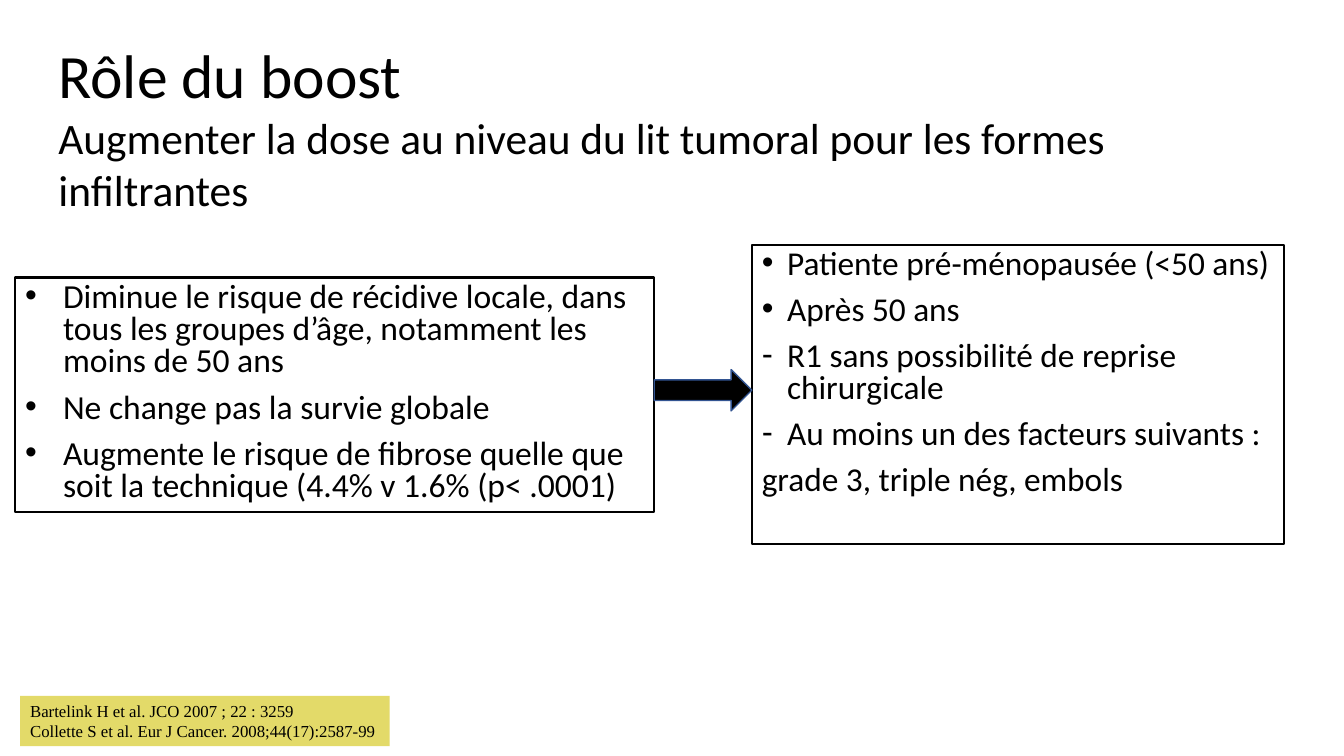
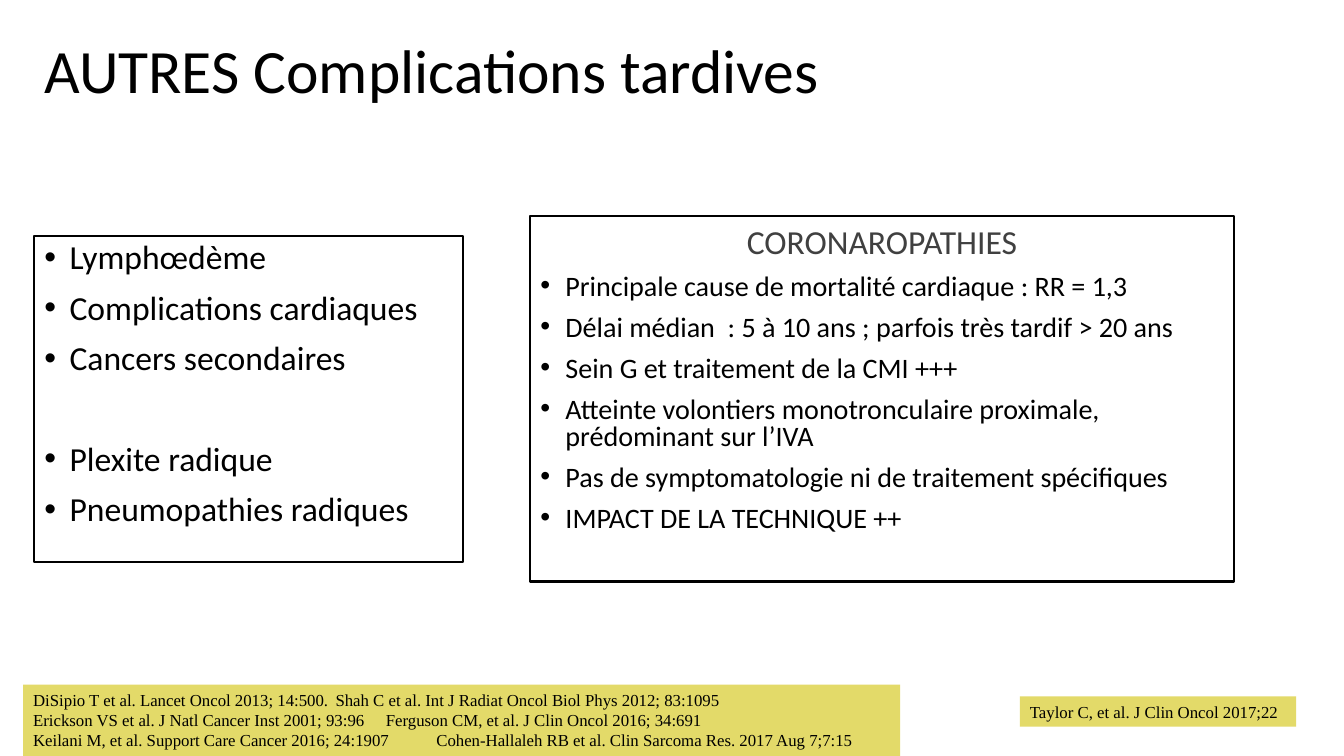
from pptx import Presentation
from pptx.dml.color import RGBColor
from pptx.enum.shapes import MSO_SHAPE
from pptx.enum.text import MSO_ANCHOR, MSO_AUTO_SIZE, PP_ALIGN
from pptx.oxml.ns import qn
from pptx.util import Pt
from lxml.etree import SubElement

BLACK = RGBColor(0x00, 0x00, 0x00)
GREY = RGBColor(0x40, 0x40, 0x40)
BLUE = RGBColor(0x32, 0x54, 0x91)
YELLOW = RGBColor(0xE3, 0xDA, 0x69)

# Text styles: a line may override any value.
BASE = dict(font="Calibri", size=24, color=BLACK, align=PP_ALIGN.LEFT,
            spacing=1, before=0, bullet=None, indent=0, tab=None)
TITLE = dict(BASE, size=44)
LIST = dict(BASE, spacing=0.8, before=10, bullet="•", indent=18)
CITE = dict(BASE, font="Times New Roman", size=12, tab=294)

# Boxes are (left, top, width, height) in points.
SLIDES = [
    dict(
        title=dict(
            box=(34.5, 23, 900, 138), anchor=MSO_ANCHOR.TOP, style=TITLE,
            lines=["Rôle du boost",
                   ("Augmenter la dose au niveau du lit tumoral pour les formes "
                    "infiltrantes", dict(size=31))]),
        lists=[
            dict(box=(10.8, 198.2, 456.5, 167.8), style=dict(LIST, indent=27),
                 lines=["Diminue le risque de récidive locale, dans tous les groupes "
                        "d’âge, notamment les moins de 50 ans",
                        "Ne change pas la survie globale",
                        "Augmente le risque de fibrose quelle que soit la technique "
                        "(4.4% v 1.6% (p< .0001)"]),
            dict(box=(537, 175, 380, 213.8), style=dict(LIST, size=23.8),
                 lines=["Patiente pré-ménopausée (<50 ans)",
                        "Après 50 ans",
                        ("R1 sans possibilité de reprise chirurgicale", dict(bullet="-")),
                        ("Au moins un des facteurs suivants :", dict(bullet="-")),
                        ("grade 3, triple nég, embols", dict(bullet=None, indent=0))]),
        ],
        arrow=(264, 29.5),
        cites=[
            dict(box=(14.4, 497, 264, 36),
                 lines=["Bartelink H et al. JCO 2007 ; 22 : 3259",
                        "Collette S et al. Eur J Cancer. 2008;44(17):2587-99"]),
        ],
    ),
    dict(
        title=dict(
            box=(24.5, 24.5, 611, 56), anchor=MSO_ANCHOR.MIDDLE,
            style=dict(TITLE, spacing=0.9),
            lines=["AUTRES Complications tardives"]),
        lists=[
            dict(box=(24.5, 168.5, 306, 233), style=dict(LIST, spacing=0.9),
                 lines=["Lymphœdème",
                        "Complications cardiaques",
                        "Cancers secondaires",
                        ("Plexite radique", dict(before=46)),
                        "Pneumopathies radiques"]),
            dict(box=(378.7, 154, 502.6, 261.4), style=dict(LIST, size=20.1),
                 lines=[("CORONAROPATHIES",
                         dict(size=24, color=GREY, align=PP_ALIGN.CENTER,
                              spacing=1, bullet=None, indent=0)),
                        "Principale cause de mortalité cardiaque : RR = 1,3",
                        "Délai médian  : 5 à 10 ans ; parfois très tardif > 20 ans",
                        "Sein G et traitement de la CMI +++",
                        "Atteinte volontiers monotronculaire proximale, prédominant "
                        "sur l’IVA",
                        "Pas de symptomatologie ni de traitement spécifiques",
                        "IMPACT DE LA TECHNIQUE ++"]),
        ],
        cites=[
            dict(box=(728.6, 497.5, 197.3, 21.6),
                 lines=["Taylor C, et al. J Clin Oncol 2017;22"]),
            dict(box=(16.6, 489, 626.4, 51),
                 lines=["DiSipio T et al. Lancet Oncol 2013; 14:500.\t"
                        "Shah C et al. Int J Radiat Oncol Biol Phys 2012; 83:1095",
                        "Erickson VS et al. J Natl Cancer Inst 2001; 93:96\t"
                        "Ferguson CM, et al. J Clin Oncol 2016; 34:691",
                        "Keilani M, et al. Support Care Cancer 2016; 24:1907\t"
                        "Cohen-Hallaleh RB et al. Clin Sarcoma Res. 2017 Aug 7;7:15"]),
        ],
    ),
]


def place(shape, box):
    for name, value in zip(("left", "top", "width", "height"), box):
        setattr(shape, name, Pt(value))


def mark(para, style):
    """Set the bullet, hanging indent and tab stop of a paragraph."""
    props = para._p.get_or_add_pPr()
    props.set("marL", str(Pt(style["indent"])))
    props.set("indent", str(-Pt(style["indent"])))
    if style["bullet"]:
        SubElement(props, qn("a:buChar"), char=style["bullet"])
    else:
        SubElement(props, qn("a:buNone"))
    if style["tab"]:
        tabs = SubElement(props, qn("a:tabLst"))
        SubElement(tabs, qn("a:tab"), pos=str(Pt(style["tab"])), algn="l")


def write(shape, lines, base, anchor=MSO_ANCHOR.TOP):
    frame = shape.text_frame
    frame.word_wrap = True
    frame.auto_size = MSO_AUTO_SIZE.NONE
    frame.vertical_anchor = anchor
    for i, line in enumerate(lines):
        text, extra = (line, {}) if isinstance(line, str) else line
        style = {**base, **extra}
        para = frame.add_paragraph() if i else frame.paragraphs[0]
        mark(para, style)
        form = dict(alignment=style["align"], line_spacing=style["spacing"],
                    space_before=Pt(style["before"] if i else 0), space_after=Pt(0))
        for name, value in form.items():
            setattr(para, name, value)
        run = para.add_run()
        run.text = text
        look = dict(name=style["font"], size=Pt(style["size"]), bold=False)
        for name, value in look.items():
            setattr(run.font, name, value)
        run.font.color.rgb = style["color"]


def add_box(slide, kind, box, fill):
    shape = slide.shapes.add_shape(kind, *map(Pt, box))
    shape.shadow.inherit = False
    shape.fill.solid()
    shape.fill.fore_color.rgb = fill
    return shape


def outline(shape, color, width):
    shape.line.color.rgb = color
    shape.line.width = Pt(width)


def build(deck, data):
    slide = deck.slides.add_slide(deck.slide_layouts.get_by_name("Two Content"))
    title, *bodies = slide.placeholders
    head = data["title"]
    place(title, head["box"])
    write(title, head["lines"], head["style"], head["anchor"])
    for body, part in zip(bodies, data["lists"]):
        place(body, part["box"])
        outline(body, BLACK, 1.5)
        write(body, part["lines"], part["style"])
    if "arrow" in data:
        top, high = data["arrow"]
        first, second = (part["box"] for part in data["lists"])
        left = first[0] + first[2]
        arrow = add_box(slide, MSO_SHAPE.RIGHT_ARROW,
                        (left, top, second[0] - left, high), BLACK)
        outline(arrow, BLUE, 1)
    for part in data["cites"]:
        cite = add_box(slide, MSO_SHAPE.RECTANGLE, part["box"], YELLOW)
        cite.line.fill.background()
        write(cite, part["lines"], CITE)


def main():
    deck = Presentation()
    deck.slide_width, deck.slide_height = Pt(960), Pt(540)
    for data in SLIDES:
        build(deck, data)
    deck.save("out.pptx")


if __name__ == "__main__":
    main()
